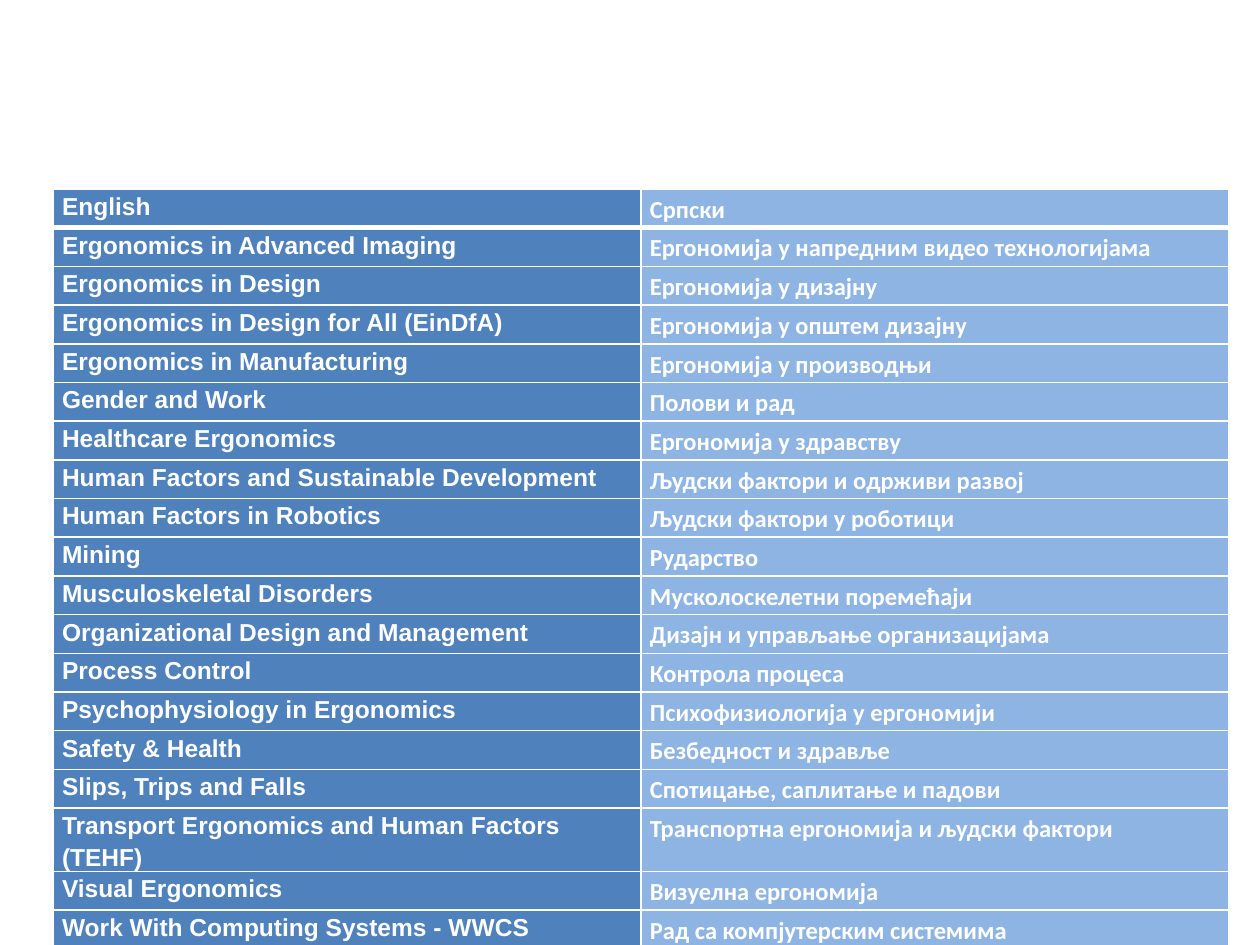
from dataclasses import dataclass
from lxml.etree import SubElement
from pptx import Presentation
from pptx.dml.color import RGBColor
from pptx.oxml import parse_xml
from pptx.oxml.ns import nsdecls
from pptx.util import Cm, Pt


@dataclass
class Theme:
    ink: str = "FFFFFF"
    rule: str = "FFFFFF"
    fills: tuple = ("4F81BD", "8EB4E3")
    fonts: tuple = ("Arial", "Calibri")
    size: int = 14
    thin: int = 1
    thick: int = 3


TERMS = [
    ("English", "Српски"),
    ("Ergonomics in Advanced Imaging", "Ергономија у напредним видео технологијама"),
    ("Ergonomics in Design", "Ергономија у дизајну"),
    ("Ergonomics in Design for All (EinDfA)", "Ергономија у општем дизајну"),
    ("Ergonomics in Manufacturing", "Ергономија у производњи"),
    ("Gender and Work", "Полови и рад"),
    ("Healthcare Ergonomics", "Ергономија у здравству"),
    ("Human Factors and Sustainable Development", "Људски фактори и одрживи развој"),
    ("Human Factors in Robotics", "Људски фактори у роботици"),
    ("Mining", "Рударство"),
    ("Musculoskeletal Disorders", "Мусколоскелетни поремећаји"),
    ("Organizational Design and Management", "Дизајн и управљање организацијама"),
    ("Process Control", "Контрола процеса"),
    ("Psychophysiology in Ergonomics", "Психофизиологија у ергономији"),
    ("Safety & Health", "Безбедност и здравље"),
    ("Slips, Trips and Falls", "Спотицање, саплитање и падови"),
    ("Transport Ergonomics and Human Factors (TEHF)", "Транспортна ергономија и људски фактори"),
    ("Visual Ergonomics", "Визуелна ергономија"),
    ("Work With Computing Systems - WWCS", "Рад са компјутерским системима"),
]


def apply(item, values):
    for name, value in values.items():
        setattr(item, name, value)


class Deck:
    def __init__(self, theme):
        self.theme = theme
        self.deck = Presentation()
        apply(self.deck, {"slide_width": Cm(25.4), "slide_height": Cm(19.05)})
        self.slide = self.deck.slides.add_slide(self.deck.slide_layouts[6])

    def table(self, rows, left, top, width, pitch):
        count = len(rows)
        frame = self.slide.shapes.add_table(
            count, len(rows[0]), Cm(left), Cm(top), Cm(width), Cm(pitch * count))
        grid = frame.table
        for line in grid.rows:
            line.height = Cm(pitch)
        for row, texts in enumerate(rows):
            for col, text in enumerate(texts):
                self.cell(grid.cell(row, col), text, row, col)

    def cell(self, cell, text, row, col):
        theme = self.theme
        apply(cell, {
            "text": text,
            "margin_left": Cm(0.18),
            "margin_right": Cm(0.18),
            "margin_top": Cm(0.03 * col),
            "margin_bottom": 0,
        })
        cell.fill.solid()
        cell.fill.fore_color.rgb = RGBColor.from_string(theme.fills[col])
        para = cell.text_frame.paragraphs[0]
        para.line_spacing = 1.15
        font = para.runs[0].font
        apply(font, {"name": theme.fonts[col], "size": Pt(theme.size), "bold": True})
        font.color.rgb = RGBColor.from_string(theme.ink)
        self.edges(cell, row)

    def edges(self, cell, row):
        theme = self.theme
        props = cell._tc.get_or_add_tcPr()
        heavy = {0: "B", 1: "T"}.get(row)
        for spot, side in enumerate("LRTB"):
            width = theme.thick if side == heavy else theme.thin
            line = parse_xml(f'<a:ln{side} {nsdecls("a")} w="{Pt(width)}"/>')
            space = line.nsmap["a"]
            fill = SubElement(line, f"{{{space}}}solidFill")
            SubElement(fill, f"{{{space}}}srgbClr", val=theme.rule)
            props.insert(spot, line)


def main():
    deck = Deck(Theme())
    deck.table(TERMS, left=1.07, top=3.81, width=23.7, pitch=0.78)
    deck.deck.save("out.pptx")


if __name__ == "__main__":
    main()
